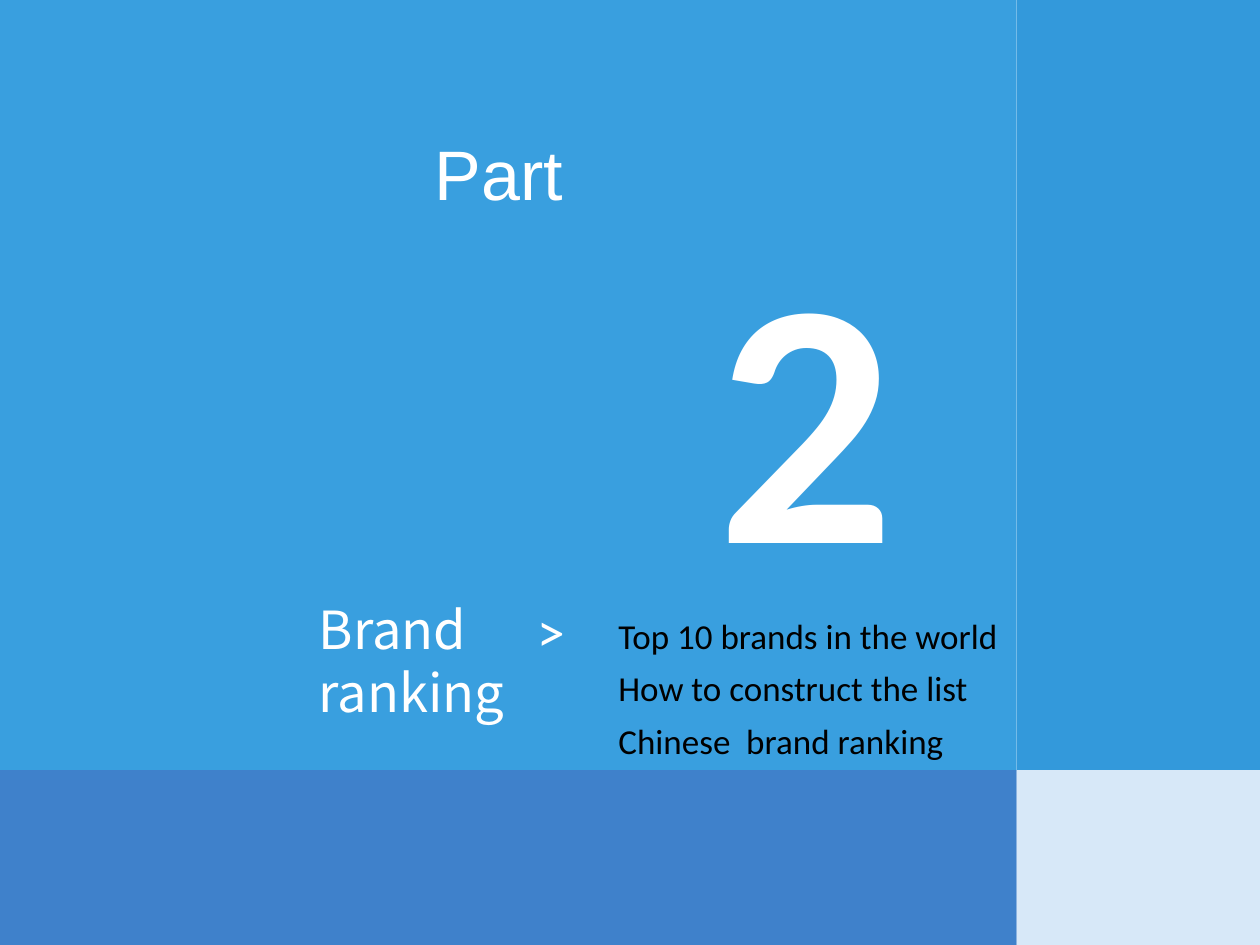
import pptx
import pptx.util
import pptx.dml.color
import pptx.enum.shapes
import pptx.enum.text

COLORS = {
    "main": "399FDF",
    "side": "3399DB",
    "base": "3F81CB",
    "corner": "D7E8F8",
    "light": "FFFFFF",
    "dark": "000000",
}
TOPICS = ["Top 10 brands in the world", "How to construct the list", "Chinese  brand ranking"]


def rgb(name):
    """Return the named palette colour."""
    return pptx.dml.color.RGBColor.from_string(COLORS[name])


def place(box, x, y, w, h):
    """Turn shares of a box into a left, top, width, height tuple."""
    left, top, width, height = box
    return (int(left + x * width), int(top + y * height), int(w * width), int(h * height))


def add_text(slide, box, text, size, font="Calibri", color="light", bold=False, spacing=None):
    """Add a text box with one paragraph per line of text."""
    tf = slide.shapes.add_textbox(*box).text_frame
    tf.word_wrap = True
    tf.auto_size = pptx.enum.text.MSO_AUTO_SIZE.SHAPE_TO_FIT_TEXT
    tf.margin_left = tf.margin_right = tf.margin_top = tf.margin_bottom = pptx.util.Inches(0.05)
    for i, line in enumerate(text.split("\n")):
        p = tf.paragraphs[0] if i == 0 else tf.add_paragraph()
        if spacing:
            p.line_spacing = pptx.util.Pt(spacing)
        r = p.add_run()
        r.text = line
        r.font.name = font
        r.font.size = pptx.util.Pt(size)
        r.font.bold = bold
        r.font.color.rgb = rgb(color)


def add_panels(slide, box, split_x=0.807, split_y=0.815):
    """Fill the box with a two by two grid of coloured panels."""
    columns = [(0, split_x), (split_x, 1 - split_x)]
    rows = [(0, split_y), (split_y, 1 - split_y)]
    names = iter(["main", "side", "base", "corner"])
    for y, h in rows:
        for x, w in columns:
            sp = slide.shapes.add_shape(
                pptx.enum.shapes.MSO_SHAPE.RECTANGLE, *place(box, x, y, w, h)
            )
            sp.shadow.inherit = False
            sp.fill.solid()
            sp.fill.fore_color.rgb = rgb(next(names))
            sp.line.fill.background()


def add_part_number(slide, box):
    """Place the part label and its large number in the box."""
    add_text(slide, place(box, 0, 0, 0.5, 0.26), "Part", 40, font="Arial")
    add_text(slide, place(box, 0.59, 0.13, 0.41, 0.87), "2", 200, bold=True)


def add_contents(slide, box):
    """Place the part title, the arrow sign and the topics in the box."""
    add_text(slide, place(box, 0, 0, 0.37, 0.61), "Brand ranking", 30, font="Noto Sans CJK SC")
    add_text(slide, place(box, 0.302, 0, 0.08, 0.34), ">", 32)
    add_text(
        slide, place(box, 0.415, 0.03, 0.585, 0.97), "\n".join(TOPICS), 20,
        color="dark", spacing=30,
    )


def main():
    """Build and save the section slide."""
    prs = pptx.Presentation()
    prs.slide_width = pptx.util.Inches(10)
    prs.slide_height = pptx.util.Inches(7.5)
    slide = prs.slides.add_slide(prs.slide_layouts[6])
    page = (0, 0, prs.slide_width, prs.slide_height)
    add_panels(slide, page)
    add_part_number(slide, place(page, 0.34, 0.132, 0.38, 0.507))
    add_contents(slide, place(page, 0.248, 0.625, 0.573, 0.241))
    prs.save("out.pptx")


if __name__ == "__main__":
    main()
